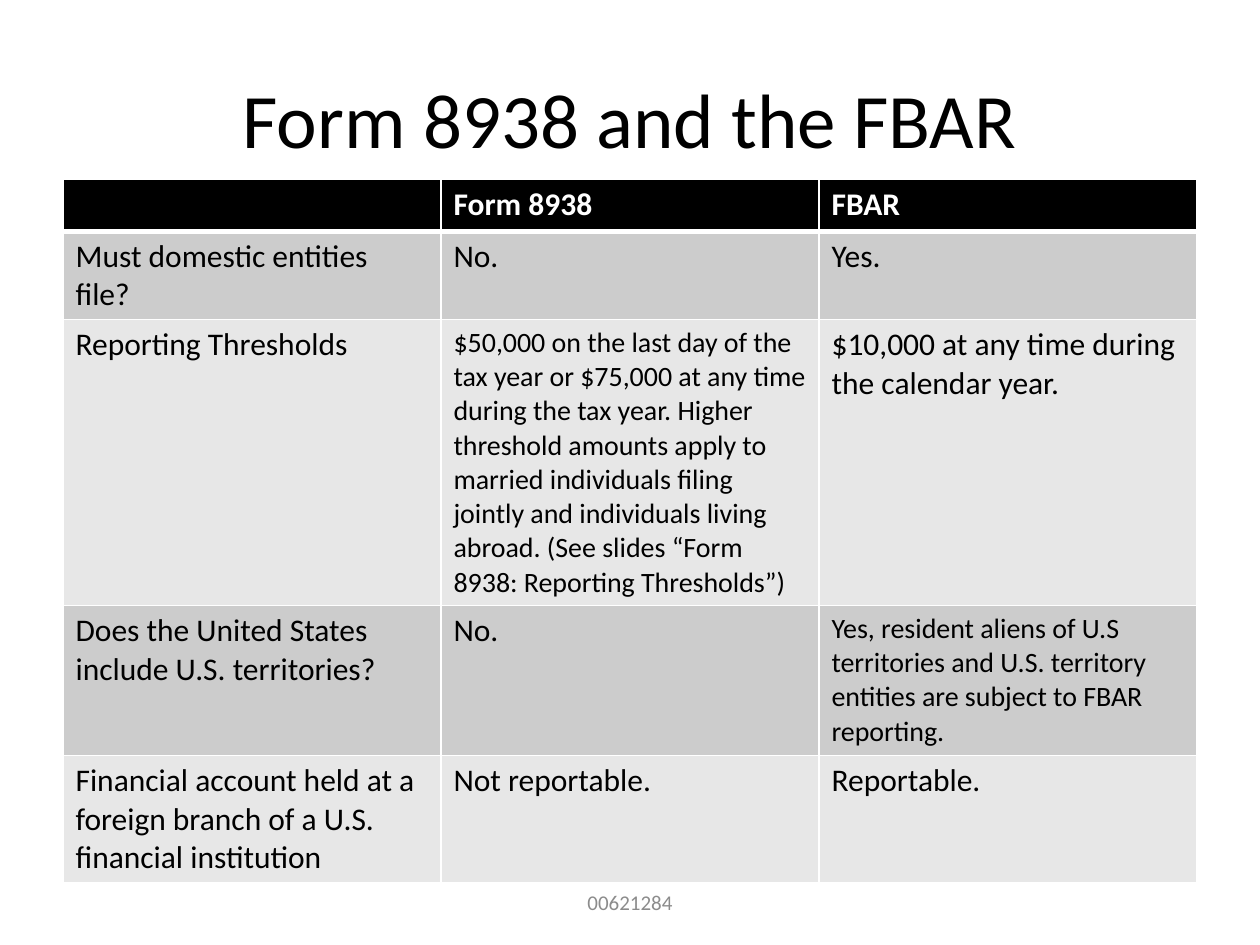
from lxml.etree import SubElement
from pptx import Presentation
from pptx.dml.color import RGBColor
from pptx.enum.text import MSO_ANCHOR as Anchor, PP_ALIGN as Align
from pptx.oxml.ns import qn
from pptx.util import Inches, Pt

W, H = 10, 7.5
COLORS = {
    "black": "000000",
    "white": "FFFFFF",
    "dark_band": "CCCCCC",
    "light_band": "E7E7E7",
    "footer": "8C8C8C",
}
ROWS = [
    ["", "Form 8938", "FBAR"],
    ["Must domestic entities file?", "No.", "Yes."],
    [
        "Reporting Thresholds",
        "$50,000 on the last day of the tax year or $75,000 at any time during "
        "the tax year. Higher threshold amounts apply to married individuals "
        "filing jointly and individuals living abroad. (See slides “Form 8938: "
        "Reporting Thresholds”)",
        "$10,000 at any time during the calendar year.",
    ],
    [
        "Does the United States include U.S. territories?",
        "No.",
        "Yes, resident aliens of U.S territories and U.S. territory entities "
        "are subject to FBAR reporting.",
    ],
    [
        "Financial account held at a foreign branch of a U.S. financial institution",
        "Not reportable.",
        "Reportable.",
    ],
]
ROW_HEIGHTS = [0.41, 0.7, 2.27, 1.19, 1.01]
LONG_TEXT = 80


def rgb(name):
    return RGBColor.from_string(COLORS[name])


def write(tf, text, size=18, color="black", bold=False, align=Align.LEFT):
    p = tf.paragraphs[0]
    p.alignment = align
    p.font.size = Pt(size)
    if text:
        r = p.add_run()
        r.text = text
        r.font.name = "Calibri"
        r.font.size = Pt(size)
        r.font.bold = bold
        r.font.color.rgb = rgb(color)


def add_text(s, text, x, y, w, h, **fmt):
    sp = s.shapes.add_textbox(
        Inches(x * W), Inches(y * H), Inches(w * W), Inches(h * H))
    tf = sp.text_frame
    tf.word_wrap = True
    tf.vertical_anchor = Anchor.MIDDLE
    write(tf, text, align=Align.CENTER, **fmt)


def set_borders(cell, **widths):
    props = cell._tc.get_or_add_tcPr()
    for i, (side, width) in enumerate(widths.items()):
        ln = props.makeelement(qn(f"a:ln{side}"), w=str(Pt(width)))
        fill = SubElement(ln, qn("a:solidFill"))
        SubElement(fill, qn("a:srgbClr"), val=COLORS["white"])
        props.insert(i, ln)


def format_cell(cell, text, row):
    header = row == 0
    band = "dark_band" if row % 2 else "light_band"
    cell.fill.solid()
    cell.fill.fore_color.rgb = rgb("black" if header else band)
    set_borders(cell, L=1, R=1, T=3 if row == 1 else 1, B=3 if header else 1)
    write(cell.text_frame, text, size=16 if len(text) > LONG_TEXT else 18,
          color="white" if header else "black", bold=header)


def add_comparison(s, x, y, w):
    cols = len(ROWS[0])
    table = s.shapes.add_table(
        len(ROWS), cols, Inches(x * W), Inches(y * H),
        Inches(w * W), Inches(sum(ROW_HEIGHTS))).table
    for col in table.columns:
        col.width = Inches(w * W / cols)
    for i, (texts, height) in enumerate(zip(ROWS, ROW_HEIGHTS)):
        table.rows[i].height = Inches(height)
        for j, text in enumerate(texts):
            format_cell(table.cell(i, j), text, i)


def main():
    prs = Presentation()
    prs.slide_width, prs.slide_height = Inches(W), Inches(H)
    s = prs.slides.add_slide(prs.slide_layouts[6])
    add_text(s, "Form 8938 and the FBAR", 0.05, 0.04, 0.9, 0.17, size=44)
    add_comparison(s, 0.05, 0.19, 0.9)
    add_text(s, "00621284", 0.3, 0.93, 0.4, 0.05, size=12, color="footer")
    prs.save("out.pptx")


if __name__ == "__main__":
    main()
